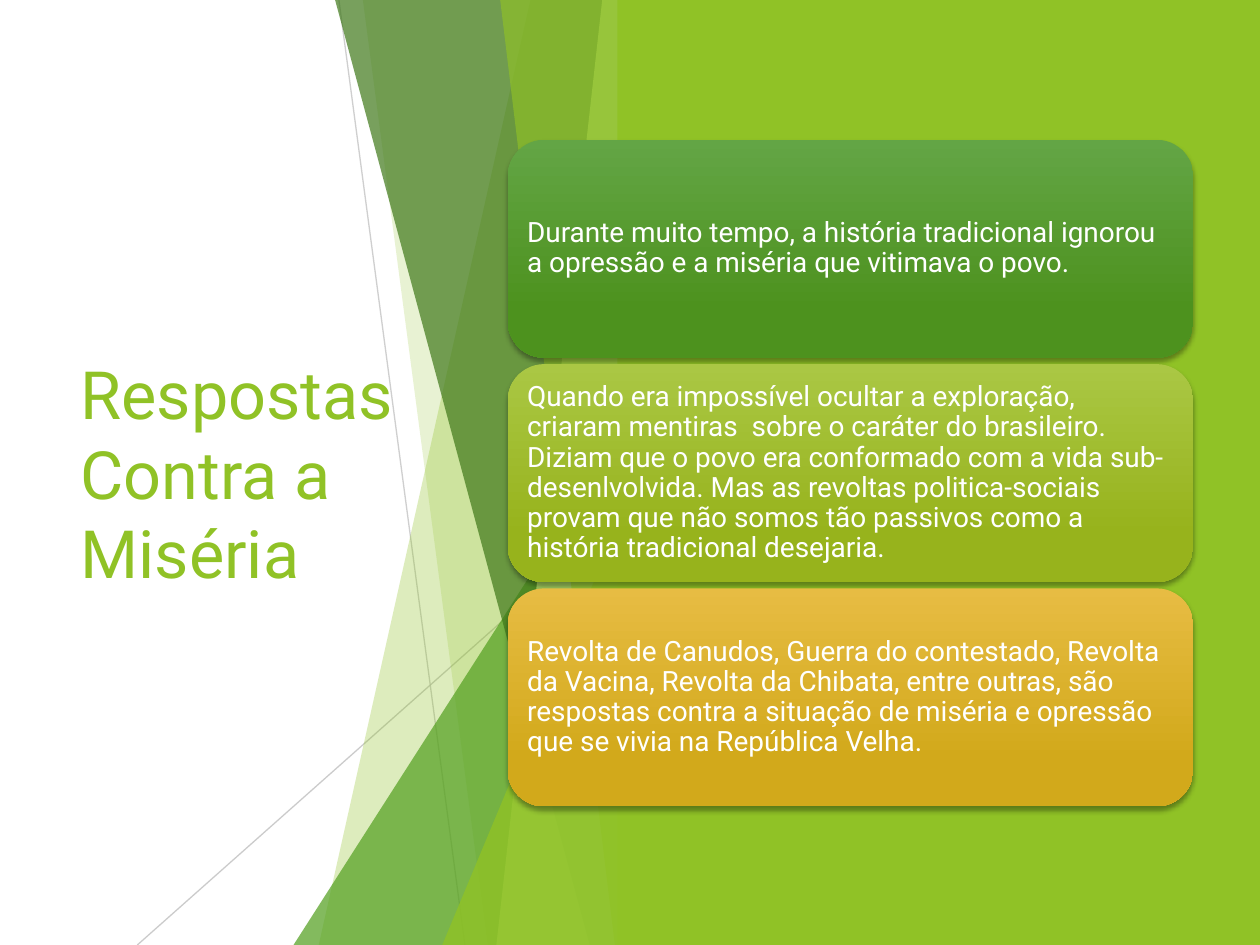
from lxml.etree import SubElement
from pptx import Presentation
from pptx.dml.color import RGBColor
from pptx.enum.shapes import MSO_CONNECTOR, MSO_SHAPE
from pptx.enum.text import MSO_ANCHOR, MSO_AUTO_SIZE, PP_ALIGN
from pptx.oxml.ns import qn
from pptx.util import Inches, Pt

GREEN, LEAF, WHITE, GRAY = "90C226", "54A021", "FFFFFF", "BFBFBF"
EDGE, FOOT = 5, 7.5  # right edge of the shards, bottom of the slide


def color(code):
    return RGBColor.from_string(code)


class Deck:
    font = "Roboto"

    def __init__(self):
        self.file = Presentation()
        self.file.slide_width, self.file.slide_height = Inches(10), Inches(FOOT)
        self.slide = self.file.slides.add_slide(self.file.slide_layouts[5])
        self.shapes = self.slide.shapes
        back = self.slide.background.fill
        back.solid()
        back.fore_color.rgb = color(WHITE)

    def fade(self, fill, alpha):
        """Set the opacity, in percent, of a solid fill."""
        tint = fill._xPr.find(qn("a:solidFill"))[0]
        SubElement(tint, qn("a:alpha"), val=str(alpha * 1000))

    def paint(self, shape, code, alpha=100):
        shape.shadow.inherit = False
        shape.line.fill.background()
        shape.fill.solid()
        shape.fill.fore_color.rgb = color(code)
        if alpha < 100:
            self.fade(shape.fill, alpha)

    def label(self, frame, text, size, code):
        frame.word_wrap = True
        frame.auto_size = MSO_AUTO_SIZE.NONE
        frame.vertical_anchor = MSO_ANCHOR.MIDDLE
        para = frame.paragraphs[0]
        para.alignment = PP_ALIGN.LEFT
        run = para.add_run()
        run.text = text
        run.font.name, run.font.size = self.font, Pt(size)
        run.font.color.rgb = color(code)
        return para

    def title(self, text, *box):
        shape = self.shapes.title
        shape.left, shape.top, shape.width, shape.height = map(Inches, box)
        self.label(shape.text_frame, text, 38, GREEN)

    def line(self, x1, y1, x2, y2, alpha):
        line = self.shapes.add_connector(
            MSO_CONNECTOR.STRAIGHT, *map(Inches, (x1, y1, x2, y2)))
        line.line.width = Pt(0.75)
        line.line.color.rgb = color(GRAY)
        self.fade(line.line.fill, alpha)
        SubElement(line._element.spPr, qn("a:effectLst"))

    def shard(self, top, base, code, alpha):
        """Four-sided band from a slanted left side to the common edge."""
        pen = self.shapes.build_freeform(Inches(top), 0)
        pen.add_line_segments([(Inches(x), Inches(y)) for x, y in
                               ((EDGE, 0), (EDGE, FOOT), (base, FOOT))])
        self.paint(pen.convert_to_shape(), code, alpha)

    def wedge(self, left, top, code, alpha):
        shape = self.shapes.add_shape(
            MSO_SHAPE.ISOSCELES_TRIANGLE,
            *map(Inches, (left, top, EDGE - left, FOOT - top)))
        shape.adjustments[0] = 1
        self.paint(shape, code, alpha)

    def panel(self, *box):
        shape = self.shapes.add_shape(MSO_SHAPE.RECTANGLE, *map(Inches, box))
        self.paint(shape, GREEN)

    def card(self, box, text, light, dark):
        shape = self.shapes.add_shape(
            MSO_SHAPE.ROUNDED_RECTANGLE, *map(Inches, box))
        shape.line.fill.background()
        # Vertical gradient
        shape.fill.gradient()
        shape.fill.gradient_angle = 270
        for stop, code, pos in zip(
                shape.fill.gradient_stops, (light, dark), (0, 0.78)):
            stop.color.rgb, stop.position = color(code), pos
        # Soft shadow below
        shape.shadow.inherit = False
        effects = shape._element.spPr.find(qn("a:effectLst"))
        outer = SubElement(effects, qn("a:outerShdw"), blurRad=str(Pt(3)),
                           dist=str(Pt(2)), dir="5400000", rotWithShape="0")
        tint = SubElement(outer, qn("a:srgbClr"), val="000000")
        SubElement(tint, qn("a:alpha"), val="35000")
        # Text
        frame = shape.text_frame
        frame.margin_left = frame.margin_right = Inches(0.07)
        frame.margin_top = frame.margin_bottom = Inches(0.07)
        self.label(frame, text, 16, WHITE).line_spacing = 0.9


CARDS = [
    ("Durante muito tempo, a história tradicional ignorou a opressão e a "
     "miséria que vitimava o povo.", "63A545", "4D921E"),
    ("Quando era impossível ocultar a exploração, criaram mentiras  sobre o "
     "caráter do brasileiro. Diziam que o povo era conformado com a vida "
     "sub-desenlvolvida. Mas as revoltas politica-sociais provam que não "
     "somos tão passivos como a história tradicional desejaria.",
     "AAC744", "97B31C"),
    ("Revolta de Canudos, Guerra do contestado, Revolta da Vacina, Revolta "
     "da Chibata, entre outras, são respostas contra a situação de miséria "
     "e opressão que se vivia na República Velha.", "E7BC43", "D2A91B"),
]


def main():
    deck = Deck()
    deck.title("Respostas Contra a Miséria", 0.54, 1.51, 2.91, 4.48)

    # Faceted band, back to front
    deck.line(2.69, 0, 3.69, FOOT, 75)
    deck.line(EDGE, 4.03, 1.09, FOOT, 80)
    deck.shard(4.21, 2.53, GREEN, 30)
    deck.shard(2.88, 3.87, GREEN, 20)
    deck.wedge(2.33, 3.33, LEAF, 72)
    deck.shard(2.66, 4.68, "3F7819", 70)
    deck.shard(4.78, 3.94, "C0E474", 70)
    deck.shard(3.97, 4.88, GREEN, 65)
    deck.wedge(3.51, 3.93, GREEN, 80)
    deck.panel(4.9, 0, 5.1, FOOT)

    # Stacked cards
    for row, (text, light, dark) in enumerate(CARDS):
        deck.card((4.03, 1.11 + 1.78 * row, 5.44, 1.73), text, light, dark)

    deck.file.save("out.pptx")


if __name__ == "__main__":
    main()
